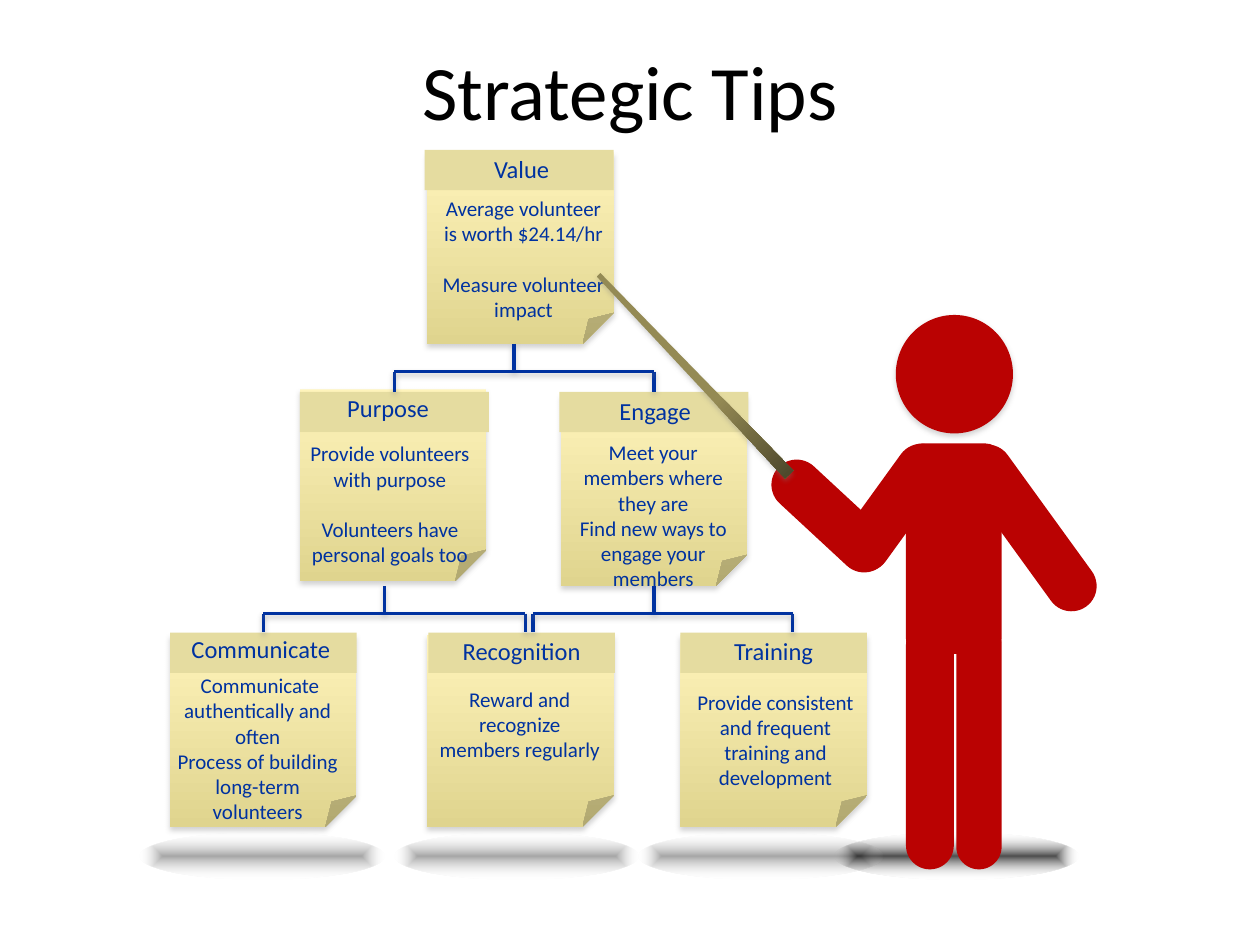
from dataclasses import dataclass

from lxml import etree
from pptx import Presentation
from pptx.dml.color import RGBColor
from pptx.enum.shapes import MSO_CONNECTOR as Connector, MSO_SHAPE as Shape
from pptx.enum.text import MSO_ANCHOR as Anchor, PP_ALIGN as Align
from pptx.oxml.ns import nsdecls, qn
from pptx.util import Inches, Pt


@dataclass(frozen=True)
class Theme:
    font: str = "Calibri"
    title_size: float = 44
    heading_size: float = 14
    body_size: float = 12
    body_gap: float = 14.6  # one line of body text
    line_width: float = 2
    black: str = "000000"
    white: str = "FFFFFF"
    navy: str = "0032A0"
    red: str = "BA0202"
    header: str = "E5DCA0"
    shadow: str = "808080"
    ground: str = "171717"
    paper: tuple = ((0, "FFF4BB", 100), (100, "DFD48E", 100))
    wood: tuple = ((0, "948A54", 100), (62, "948A54", 100), (100, "4A452A", 100))


LINEAR = '<a:lin ang="5400000" scaled="0"/>'
RADIAL = ('<a:path path="shape"><a:fillToRect l="50000" t="50000" '
          'r="50000" b="50000"/></a:path>')


class Painter:
    def __init__(self, slide, theme):
        self.slide = slide
        self.theme = theme

    def shadow(self, shape, alpha=35, distance=1.8):
        properties = shape._element.spPr
        for effects in properties.findall(qn("a:effectLst")):
            properties.remove(effects)
        properties.append(etree.fromstring(
            f'<a:effectLst {nsdecls("a")}><a:outerShdw blurRad="{Pt(3.1)}" '
            f'dist="{Pt(distance)}" dir="5400000" rotWithShape="0">'
            f'<a:srgbClr val="{self.theme.shadow}"><a:alpha val="{alpha * 1000}"/>'
            f'</a:srgbClr></a:outerShdw></a:effectLst>'))

    def paint(self, shape, fill, direction=LINEAR, shadow=False):
        """Fill with one colour, or with (position, colour, opacity) stops."""
        shape.shadow.inherit = False
        shape.line.fill.background()
        if isinstance(fill, str):
            shape.fill.solid()
            shape.fill.fore_color.rgb = RGBColor.from_string(fill)
        else:
            stops = "".join(
                f'<a:gs pos="{position * 1000}"><a:srgbClr val="{color}">'
                f'<a:alpha val="{opacity * 1000}"/></a:srgbClr></a:gs>'
                for position, color, opacity in fill)
            shape.fill.background()
            empty = shape._element.spPr.find(qn("a:noFill"))
            empty.getparent().replace(empty, etree.fromstring(
                f'<a:gradFill {nsdecls("a")} rotWithShape="1">'
                f'<a:gsLst>{stops}</a:gsLst>{direction}</a:gradFill>'))
        if shadow:
            self.shadow(shape)
        return shape

    def shape(self, kind, box, fill, rotation=0, corner=None, **style):
        shape = self.slide.shapes.add_shape(kind, *map(Inches, box))
        shape.rotation = rotation
        if corner is not None:
            shape.adjustments[0] = corner
        return self.paint(shape, fill, **style)

    def text(self, box, lines, size, color, gap=0):
        text_box = self.slide.shapes.add_textbox(*map(Inches, box))
        text_frame = text_box.text_frame
        text_frame.word_wrap = True
        text_frame.vertical_anchor = Anchor.TOP
        text_frame.text = "\n".join(lines)
        for number, paragraph in enumerate(text_frame.paragraphs):
            paragraph.alignment = Align.CENTER
            if number and gap:
                paragraph.space_before = Pt(gap)
            for run in paragraph.runs:
                run.font.name = self.theme.font
                run.font.size = Pt(size)
                run.font.color.rgb = RGBColor.from_string(color)

    def note(self, paper, header, heading_at, heading, body_box, lines, gap=0):
        """Sticky note; returns its paper and its header strip."""
        theme = self.theme
        sheet = self.shape(Shape.FOLDED_CORNER, (*paper, 1.48, 1.52),
                           theme.paper, shadow=True)
        strip = self.shape(Shape.RECTANGLE, (*header, 0.32), theme.header)
        self.text((*heading_at, 1.48, 0.34), [heading],
                  theme.heading_size, theme.navy)
        self.text(body_box, lines, theme.body_size, theme.navy, gap)
        return sheet, strip

    def line(self, start, end, begin_shape=None, end_shape=None):
        line = self.slide.shapes.add_connector(
            Connector.STRAIGHT, *map(Inches, (*start, *end)))
        if begin_shape is not None:
            line.begin_connect(begin_shape, 2)
        if end_shape is not None:
            line.end_connect(end_shape, 0)
        line.line.color.rgb = RGBColor.from_string(self.theme.navy)
        line.line.width = Pt(self.theme.line_width)
        self.shadow(line, alpha=38, distance=1.6)

    def branch(self, stem, bar, bottom, parent=None, children=(None, None)):
        """Stem (x, top) down to a bar (left, right, y) with two drops."""
        left, right, y = bar
        self.line(stem, (stem[0], y), begin_shape=parent)
        for x, child in zip((left, right), children):
            self.line((x, y), (x, bottom), end_shape=child)
        self.line((left, y), (right, y))

    def ground(self, left, opacity):
        stops = ((0, self.theme.ground, opacity), (100, self.theme.white, 0))
        self.shape(Shape.OVAL, (left, 6.61, 1.94, 0.37), stops, direction=RADIAL)

    def pointer(self, points, rotation):
        start, *others = [(Inches(x), Inches(y)) for x, y in points]
        builder = self.slide.shapes.build_freeform(*start)
        builder.add_line_segments(others, close=True)
        stick = builder.convert_to_shape()
        stick.rotation = rotation
        self.paint(stick, self.theme.wood, shadow=True)


def main():
    presentation = Presentation()
    presentation.slide_width, presentation.slide_height = Inches(10), Inches(7.5)
    slide = presentation.slides.add_slide(presentation.slide_layouts[6])
    theme = Theme()
    painter = Painter(slide, theme)

    # Title
    painter.text((0.5, 0.3, 9, 1.25), ["Strategic Tips"],
                 theme.title_size, theme.black)

    # Sticky notes, level by level
    painter.note((3.39, 1.21), (3.37, 1.19, 1.5), (3.4, 1.17), "Value",
                 (3.4, 1.5, 1.51, 1.51),
                 ["Average volunteer is worth $24.14/hr",
                  "Measure volunteer impact"], theme.body_gap)
    _, purpose_header = painter.note(
        (2.38, 3.09), (2.38, 3.11, 1.5), (2.34, 3.07), "Purpose",
        (2.34, 3.45, 1.51, 1.26),
        ["Provide volunteers with purpose",
         "Volunteers have personal goals too"], theme.body_gap)
    engage, engage_header = painter.note(
        (4.45, 3.13), (4.44, 3.11, 1.5), (4.46, 3.09), "Engage",
        (4.43, 3.44, 1.51, 1.48),
        ["Meet your members where they are",
         "Find new ways to engage your members"])
    _, communicate_header = painter.note(
        (1.35, 5.04), (1.35, 5.02, 1.48), (1.33, 4.98), "Communicate",
        (1.29, 5.29, 1.51, 1.72),
        [" Communicate authentically and often",
         "Process of building long-term volunteers"])
    painter.note((3.39, 5.04), (3.4, 5.02, 1.48), (3.4, 5), "Recognition",
                 (3.37, 5.4, 1.51, 0.86),
                 ["Reward and recognize members regularly"])
    painter.note((5.4, 5.04), (5.4, 5.02, 1.48), (5.4, 5), "Training",
                 (5.4, 5.42, 1.51, 1.06),
                 ["Provide consistent and frequent training and development"])

    # Presenter: ground shadow, head, torso, legs and arms
    painter.ground(6.62, 76)
    painter.shape(Shape.OVAL, (7.11, 2.5, 0.93, 0.94), theme.red, shadow=True)
    painter.shape(Shape.ROUNDED_RECTANGLE, (7.19, 3.52, 0.76, 1.67), theme.red)
    limbs = [((7.19, 4.93, 0.38, 1.97), 0), ((7.59, 4.93, 0.36, 1.97), 0),
             ((7.97, 3.42, 0.4, 1.54), 324.1), ((6.89, 3.45, 0.4, 1.16), 35.9),
             ((6.39, 3.53, 0.4, 1.13), 132.8)]
    for box, rotation in limbs:
        painter.shape(Shape.ROUNDED_RECTANGLE, box, theme.red, rotation, corner=0.5)
    painter.pointer([(5.46, 4.07), (5.49, 1.88), (5.53, 1.88), (5.55, 4.07)], 316.2)

    # Tree branches
    painter.branch((4.08, 2.73), (3.13, 5.19, 2.95), 3.11,
                   children=(purpose_header, engage_header))
    painter.branch((3.05, 4.65), (2.09, 4.17, 4.87), 5.02,
                   children=(communicate_header, None))
    painter.branch((5.19, 4.65), (4.23, 6.29, 4.87), 5.02, parent=engage)

    # Ground shadows of the bottom notes
    for left in (1.11, 3.13, 5.07):
        painter.ground(left, 38)

    presentation.save("out.pptx")


if __name__ == "__main__":
    main()
